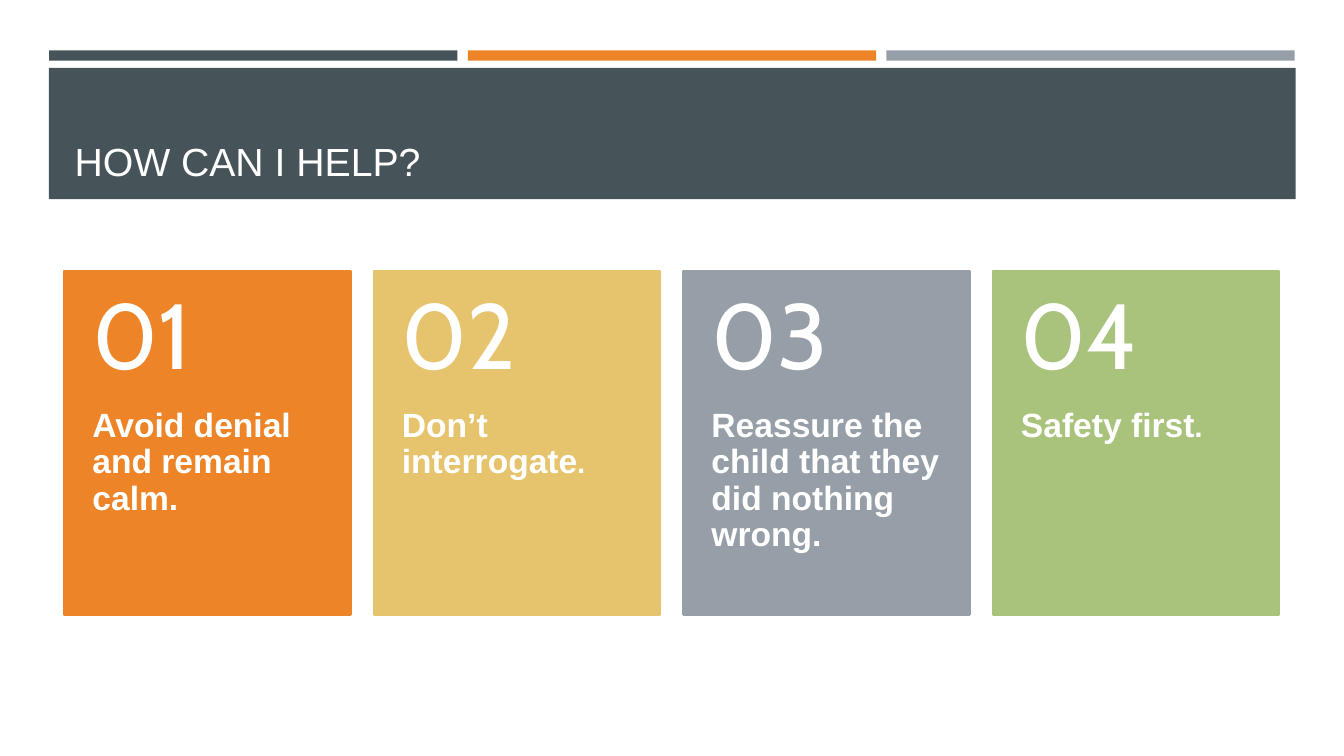
from typing import NamedTuple

from pptx import Presentation
from pptx import util as u
from pptx.dml.color import RGBColor
from pptx.enum import shapes, text

HUES = {
    "slate": "465359",
    "orange": "ED8428",
    "gray": "969FA7",
    "gold": "E6C46D",
    "green": "A9C37C",
    "title": "FFFEFF",
    "white": "FFFFFF",
}


class Box(NamedTuple):
    """Left, top, width and height in centimetres."""
    left: float
    top: float
    width: float
    height: float


class Card(NamedTuple):
    hue: str
    runs: list[tuple[str, str]]


CARDS = [
    Card("orange", [("Avoid denial and remain calm.", "Arial")]),
    Card("gold", [("Don’t interrogate", "Arial"), (".", "Cabin")]),
    Card("gray", [("Reassure the child that they did nothing wrong.", "Arial")]),
    Card("green", [("Safety first", "Arial"), (".", "Cabin")]),
]


def shade(hue: str) -> RGBColor:
    return RGBColor.from_string(HUES[hue])


def add_rect(slide, box: Box, hue: str, line: float = 0) -> None:
    rect = slide.shapes.add_shape(shapes.MSO_SHAPE.RECTANGLE, *map(u.Cm, box))
    rect.shadow.inherit = False
    rect.fill.solid()
    rect.fill.fore_color.rgb = shade(hue)
    if line:
        rect.line.color.rgb = shade(hue)
        rect.line.width = u.Pt(line)
    else:
        rect.line.fill.background()


def write(shape, runs: list[tuple[str, str]], *, size: float, hue: str = "white",
          bold: bool = False, anchor=text.MSO_ANCHOR.TOP, space: float = 1,
          pads: tuple[float, float, float, float] = (0.25, 0.13, 0.25, 0.13)) -> None:
    """Fill a shape with (text, font) runs; pads are left, top, right, bottom."""
    frame = shape.text_frame
    frame.word_wrap = True
    frame.auto_size = text.MSO_AUTO_SIZE.NONE
    frame.vertical_anchor = anchor
    (frame.margin_left, frame.margin_top,
     frame.margin_right, frame.margin_bottom) = map(u.Cm, pads)
    para = frame.paragraphs[0]
    para.alignment = text.PP_ALIGN.LEFT
    para.line_spacing = space
    for words, face in runs:
        run = para.add_run()
        run.text = words
        run.font.name = face
        run.font.size = u.Pt(size)
        run.font.bold = bold
        run.font.color.rgb = shade(hue)


def add_head(slide) -> None:
    for col, hue in enumerate(("slate", "orange", "gray")):
        add_rect(slide, Box(1.24 + col * 10.55, 1.27, 10.29, 0.26), hue)
    add_rect(slide, Box(1.23, 1.71, 31.42, 3.31), "slate")
    title = slide.shapes.title
    title.left, title.top, title.width, title.height = map(
        u.Cm, Box(1.63, 1.96, 30.63, 2.82))
    write(title, [("HOW CAN I HELP?", "Arial")], size=28, hue="title",
          anchor=text.MSO_ANCHOR.BOTTOM)
    # Bring the title in front of its band
    title.element.getparent().append(title.element)


def add_card(slide, index: int, card: Card) -> None:
    box = Box(1.62 + index * 7.8, 6.83, 7.22, 8.66)
    top = box._replace(height=box.height * 0.4)
    low = box._replace(top=box.top + top.height, height=box.height * 0.6)
    add_rect(slide, box, card.hue, line=1.75)
    body = slide.shapes.add_textbox(*map(u.Cm, low))
    write(body, card.runs, size=24, bold=True, space=0.9,
          pads=(0.71, 0, 0.71, 0.91))
    number = slide.shapes.add_textbox(*map(u.Cm, top))
    write(number, [(f"{index + 1:02}", "Cabin")], size=66, space=0.9,
          anchor=text.MSO_ANCHOR.MIDDLE, pads=(0.71, 0.46, 0.71, 0.46))


def main() -> None:
    deck = Presentation()
    deck.slide_width, deck.slide_height = u.Cm(33.87), u.Cm(19.05)
    slide = deck.slides.add_slide(deck.slide_layouts[5])
    add_head(slide)
    for index, card in enumerate(CARDS):
        add_card(slide, index, card)
    deck.save("out.pptx")


if __name__ == "__main__":
    main()
